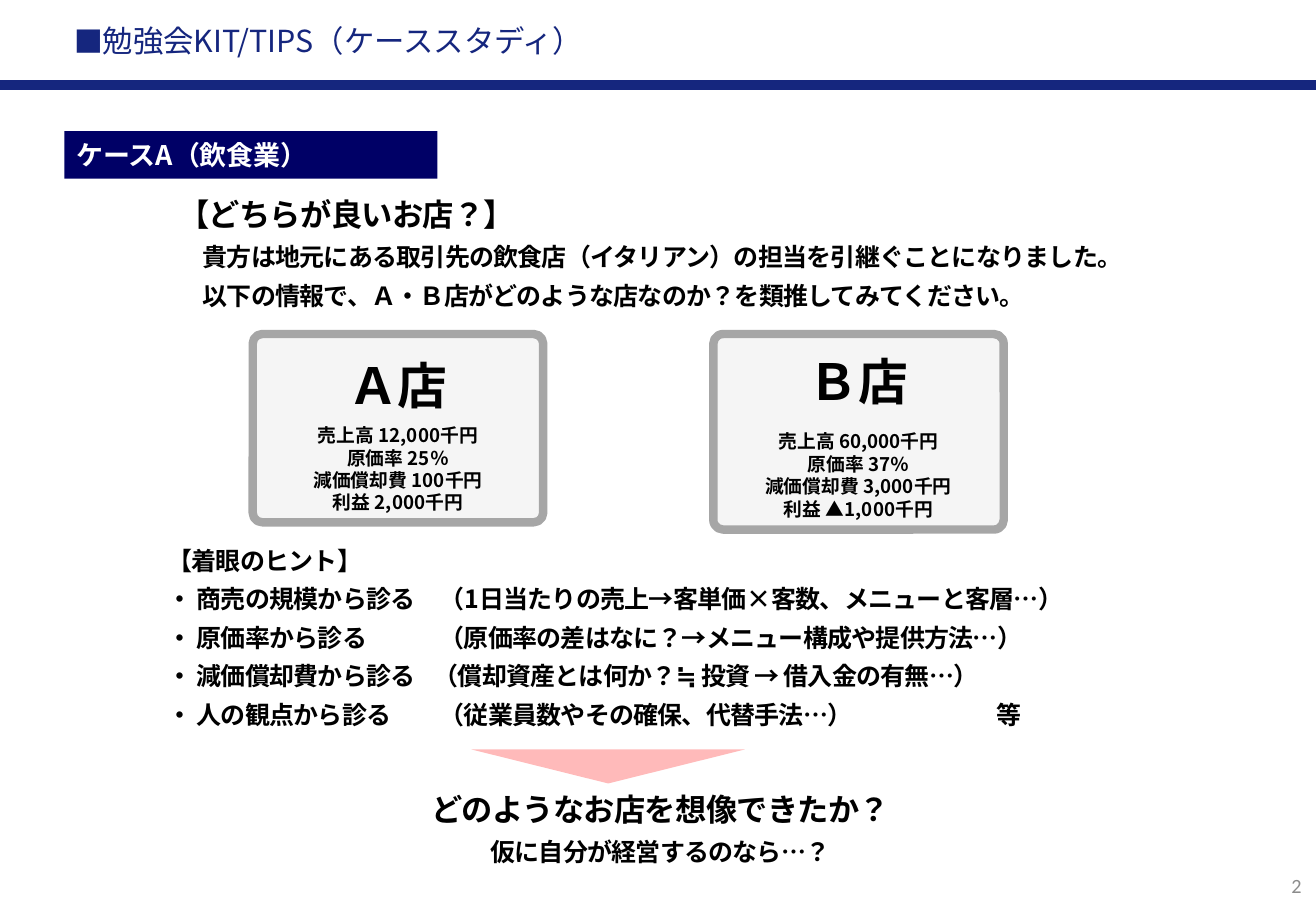
from dataclasses import dataclass

from lxml.etree import SubElement
from pptx import Presentation
from pptx.dml.color import RGBColor
from pptx.enum.lang import MSO_LANGUAGE_ID as LANG
from pptx.enum.shapes import MSO_SHAPE as SHAPE
from pptx.enum.text import MSO_ANCHOR as ANCHOR, PP_ALIGN as ALIGN
from pptx.oxml.ns import qn
from pptx.util import Pt

PX = 9144


@dataclass(frozen=True)
class Theme:
    """Colours, fonts and type sizes of the slide."""
    navy: str = "15267E"
    label: str = "000066"
    white: str = "FFFFFF"
    black: str = "000000"
    grey: str = "A6A6A6"
    number: str = "8C8C8C"
    red: str = "FF0000"
    font: str = "Noto Sans CJK JP"
    number_font: str = "Calibri"
    title: float = 18
    section: float = 16
    heading: float = 18.5
    body: float = 14.8
    store: float = 29.5
    figures: float = 11.1
    page: float = 12


T = Theme()


def rgb(color):
    """Return the colour object for a hex string."""
    return RGBColor.from_string(color)


def add_shape(s, kind, box, fill, alpha=100):
    """Add a flat shape without outline, filled at the given opacity."""
    sp = s.shapes.add_shape(kind, *(v * PX for v in box))
    sp.shadow.inherit = False
    sp.fill.solid()
    sp.fill.fore_color.rgb = rgb(fill)
    sp.line.fill.background()
    if alpha < 100:
        clr = sp.fill._xPr.find(".//" + qn("a:srgbClr"))
        SubElement(clr, qn("a:alpha"), val=str(alpha * 1000))
    return sp


def add_text(s, box, wrap=True):
    """Add an empty text box and return its frame."""
    tf = s.shapes.add_textbox(*(v * PX for v in box)).text_frame
    tf.word_wrap = wrap
    return tf


def write(tf, lines, size, color=T.black, bold=True, align=ALIGN.LEFT,
          font=T.font, leading=1.0, after=0, spacing=0):
    """Append lines in one style and return their paragraphs."""
    added = []
    for line in lines:
        p = tf.add_paragraph() if tf.text else tf.paragraphs[0]
        p.text = line
        p.alignment = align
        p.line_spacing = leading
        p.space_after = Pt(after)
        p.font.size = Pt(size)
        p.font.bold = bold
        p.font.color.rgb = rgb(color)
        p.font.name = font
        p.font.language_id = LANG.JAPANESE
        r_pr = p.font._rPr
        SubElement(r_pr, qn("a:ea"), typeface=font)
        if spacing:
            r_pr.set("spc", str(spacing))
        added.append(p)
    return added


def write_copy(tf, lines, size, align=ALIGN.LEFT):
    """Append slightly tightened body copy."""
    return write(tf, lines, size, align=align, after=5.1, spacing=-40)


def header(s, box):
    """Draw the slide title above its rule."""
    x, y, w, h = box
    add_shape(s, SHAPE.RECTANGLE, (x, y + h - 8, w, 8), T.navy)
    tf = add_text(s, (x + 53, y + 22, w - 101, 39))
    tf.margin_left = tf.margin_right = 8 * PX
    tf.margin_top = tf.margin_bottom = 4 * PX
    p, = write(tf, ["勉強会KIT/TIPS（ケーススタディ）"], T.title, T.navy,
               bold=False, leading=0.7)
    p_pr = p._p.pPr
    p_pr.set("marL", str(9 * PX))
    p_pr.set("indent", str(-9 * PX))
    def_r_pr = p_pr.find(qn("a:defRPr"))
    def_r_pr.addprevious(SubElement(p_pr, qn("a:buFont"), typeface=T.number_font))
    def_r_pr.addprevious(SubElement(p_pr, qn("a:buChar"), char="■"))


def section_label(s, box):
    """Draw the dark label naming the case."""
    tf = add_shape(s, SHAPE.RECTANGLE, box, T.label).text_frame
    tf.vertical_anchor = ANCHOR.MIDDLE
    write(tf, ["ケースA（飲食業）"], T.section, T.white)


def question(s, box):
    """Write the question and its indented briefing."""
    tf = add_text(s, box)
    write_copy(tf, ["【どちらが良いお店？】"], T.heading)
    for p in write_copy(tf, [
            "貴方は地元にある取引先の飲食店（イタリアン）の担当を引継ぐことになりました。",
            "以下の情報で、Ａ・Ｂ店がどのような店なのか？を類推してみてください。"], T.body):
        p._p.pPr.set("marL", str(20 * PX))


def store_card(s, box, name, name_dy, figures, figures_dy):
    """Draw one store's card with its name and key figures."""
    x, y, w, h = box
    sp = add_shape(s, SHAPE.ROUNDED_RECTANGLE, box, T.grey, 10)
    sp.adjustments[0] = 0.05
    sp.line.color.rgb = rgb(T.grey)
    sp.line.width = Pt(5)
    tf = add_text(s, (x - 15, y + name_dy, w + 30, 60))
    write(tf, [name], T.store, align=ALIGN.CENTER)
    tf = add_text(s, (x - 34, y + figures_dy, w + 68, 100))
    write(tf, figures, T.figures, align=ALIGN.CENTER)


def hints(s, box):
    """Write the hints in columns set by tab stops."""
    tf = add_text(s, box)
    write_copy(tf, ["【着眼のヒント】"], T.body)
    for line, column in (
            ("・ 商売の規模から診る\t（1日当たりの売上→客単価×客数、メニューと客層…）", 224),
            ("・ 原価率から診る\t（原価率の差はなに？→メニュー構成や提供方法…）", 224),
            ("・ 減価償却費から診る\t（償却資産とは何か？≒ 投資 → 借入金の有無…）", 219),
            ("・ 人の観点から診る\t（従業員数やその確保、代替手法…）\t等", 224)):
        p, = write_copy(tf, [line], T.body)
        p_pr = p._p.pPr
        tabs = SubElement(p_pr, qn("a:tabLst"))
        for stop in (column, 682):
            SubElement(tabs, qn("a:tab"), pos=str(stop * PX), algn="l")
        p_pr.find(qn("a:defRPr")).addprevious(tabs)


def conclusion(s, box):
    """Draw the downward pointer and the closing question."""
    x, y, w, h = box
    add_shape(s, SHAPE.ISOSCELES_TRIANGLE, (x + 45, y, 225, 28), T.red, 27).rotation = 180
    tf = add_text(s, (x, y + 29, w, h - 29), wrap=False)
    write_copy(tf, ["どのようなお店を想像できたか？"], T.heading, ALIGN.CENTER)
    write_copy(tf, ["仮に自分が経営するのなら…？"], T.body, ALIGN.CENTER)


def page_number(s, box):
    """Write the page number."""
    tf = add_text(s, box)
    tf.vertical_anchor = ANCHOR.MIDDLE
    write(tf, ["2"], T.page, T.number, bold=False, align=ALIGN.RIGHT,
          font=T.number_font)


def main():
    """Build and save the slide."""
    prs = Presentation()
    prs.slide_width, prs.slide_height = 1083 * PX, 750 * PX
    s = prs.slides.add_slide(prs.slide_layouts[6])
    header(s, (0, 0, 1083, 74))
    section_label(s, (53, 108, 307, 39))
    question(s, (137, 156, 814, 105))
    store_card(s, (208, 275, 239, 155), "Ａ店", 12,
               ["売上高 12,000千円", "原価率 25％", "減価償却費 100千円", "利益 2,000千円"], 69)
    store_card(s, (587, 275, 239, 161), "Ｂ店", 9,
               ["売上高 60,000千円", "原価率 37％", "減価償却費 3,000千円", "利益 ▲1,000千円"], 74)
    hints(s, (128, 444, 804, 162))
    conclusion(s, (343, 617, 401, 102))
    page_number(s, (1028, 709, 53, 40))
    prs.save("out.pptx")


if __name__ == "__main__":
    main()
